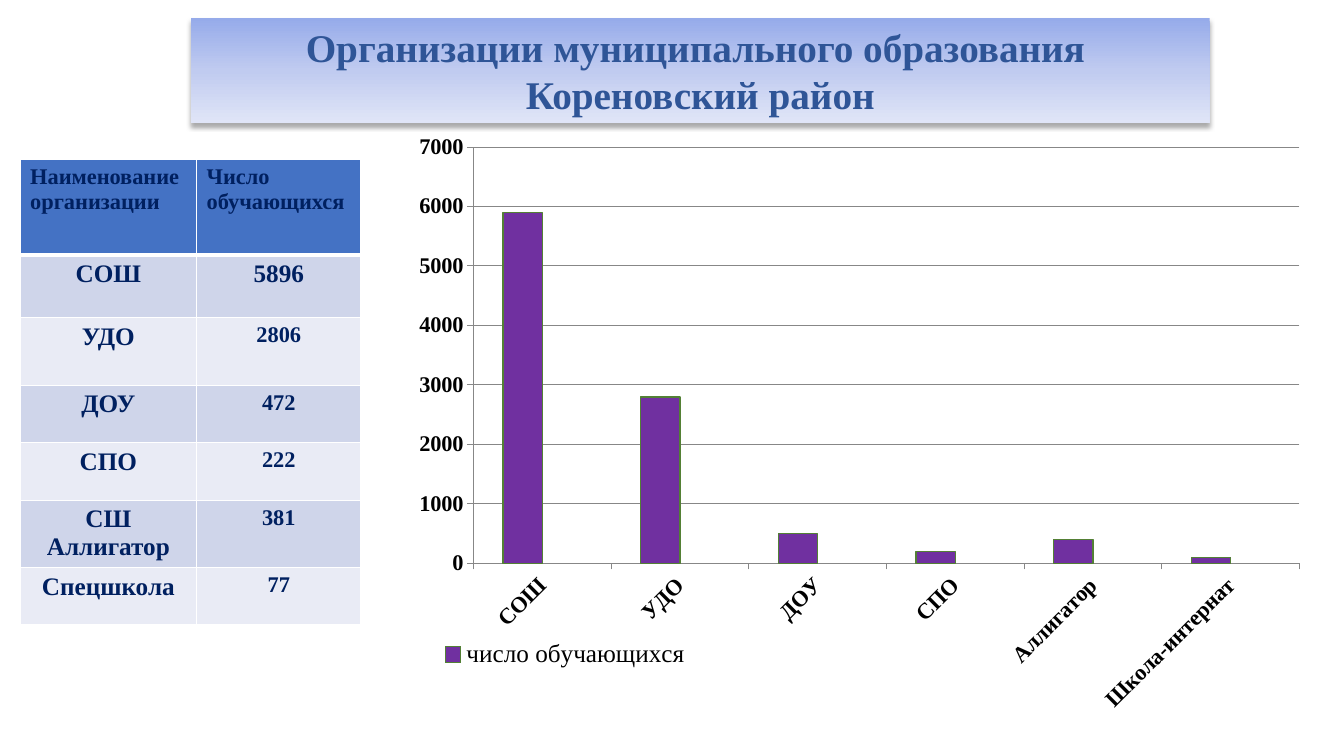
from copy import deepcopy
from lxml import etree
from pptx import Presentation, util as u
from pptx.chart import data as chart_data
from pptx.dml.color import RGBColor
from pptx.enum import chart as ch, shapes, text
from pptx.oxml import parse_xml
from pptx.oxml.ns import nsdecls, qn

WIDTH, HEIGHT = u.Inches(13.33), u.Inches(7.5)
SERIF = "Times New Roman"
NAVY, WHITE, BLACK, GRID = "002060", "FFFFFF", "000000", "878787"
HEADINGS = ("Наименование организации", "Число обучающихся")
ORGANISATIONS = [
    ("СОШ", "СОШ", 5896),
    ("УДО", "УДО", 2806),
    ("ДОУ", "ДОУ", 472),
    ("СПО", "СПО", 222),
    ("СШ Аллигатор", "Аллигатор", 381),
    ("Спецшкола", "Школа-интернат", 77),
]


def colour(value):
    """Turn a hex string into a colour."""
    return RGBColor.from_string(value)


def style(font, hue, **values):
    """Set the colour and the given format values of a font."""
    for name, value in {"name": SERIF, **values}.items():
        setattr(font, name, value)
    font.color.rgb = colour(hue)


def share(left, top, width, height):
    """Turn shares of the slide into a box."""
    return [u.Emu(int(part * side)) for part, side in
            zip((left, top, width, height), (WIDTH, HEIGHT) * 2)]


def add_banner(slide, box, lines):
    """Place the shaded title banner in the box."""
    banner = slide.shapes.add_shape(shapes.MSO_SHAPE.RECTANGLE, *box)
    banner.line.fill.background()
    banner.fill.gradient()
    banner.fill.gradient_angle = 270
    first = banner.fill._fill._gradFill.gsLst[0]
    first.addnext(deepcopy(first))
    for stop, (position, hue) in zip(
            banner.fill.gradient_stops,
            ((0, "96ABEA"), (0.5, "C0CBF0"), (1, "E0E5F7"))):
        stop.position = position
        stop.color.rgb = colour(hue)
    banner.shadow.inherit = False
    banner._element.spPr.find(qn("a:effectLst")).append(parse_xml(
        f'<a:outerShdw {nsdecls("a")} blurRad="{u.Pt(3.5)}" dist="{u.Pt(2.2)}" '
        'dir="5400000" rotWithShape="0"><a:srgbClr val="000000">'
        '<a:alpha val="32000"/></a:srgbClr></a:outerShdw>'))
    frame = banner.text_frame
    frame.word_wrap = True
    frame.vertical_anchor = text.MSO_ANCHOR.MIDDLE
    for number, line in enumerate(lines):
        paragraph = frame.paragraphs[0] if number == 0 else frame.add_paragraph()
        paragraph.alignment = text.PP_ALIGN.CENTER
        run = paragraph.add_run()
        run.text = line
        style(run.font, "2F5597", size=u.Pt(28), bold=True)


def add_borders(cell, **widths):
    """Draw white cell borders of the given widths in points."""
    for index, side in enumerate("LRTB"):
        cell._tc.get_or_add_tcPr().insert(index, parse_xml(
            f'<a:ln{side} {nsdecls("a")} w="{u.Pt(widths.get(side, 1))}">'
            f'<a:solidFill><a:srgbClr val="{WHITE}"/></a:solidFill></a:ln{side}>'))


def add_organisation_table(slide, box):
    """Place the table of organisations and student numbers in the box."""
    rows = [HEADINGS] + [(name, str(count)) for name, _, count in ORGANISATIONS]
    table = slide.shapes.add_table(len(rows), len(HEADINGS), *box).table
    for column, width in zip(table.columns, (1.75, 1.63)):
        column.width = u.Inches(width)
    for row, height in zip(table.rows, (0.95, 0.62, 0.67, 0.57, 0.57, 0.67, 0.57)):
        row.height = u.Inches(height)
    for r, values in enumerate(rows):
        for c, value in enumerate(values):
            cell = table.cell(r, c)
            cell.fill.solid()
            band = "CFD5EA" if r % 2 else "E9EBF5"
            cell.fill.fore_color.rgb = colour(band if r else "4472C4")
            add_borders(cell, **{0: {"B": 3}, 1: {"T": 3}}.get(r, {}))
            paragraph = cell.text_frame.paragraphs[0]
            if r:
                paragraph.alignment = text.PP_ALIGN.CENTER
            run = paragraph.add_run()
            run.text = value
            large = r == 1 or (r and c == 0)
            style(run.font, NAVY, size=u.Pt(18 if large else 16), bold=True)


def manual_layout(x, y, w, h, inner=False):
    """Make a chart layout from shares of the chart."""
    target = '<c:layoutTarget val="inner"/>' if inner else ""
    modes = "".join(f'<c:{side}Mode val="edge"/>' for side in "xy")
    sizes = "".join(f'<c:{side} val="{value}"/>'
                    for side, value in zip("xywh", (x, y, w, h)))
    return parse_xml(f'<c:layout {nsdecls("c")}><c:manualLayout>'
                     f'{target}{modes}{sizes}</c:manualLayout></c:layout>')


def add_student_chart(slide, box):
    """Place the column chart of student numbers, in round hundreds, in the box."""
    numbers = chart_data.CategoryChartData()
    numbers.categories = [label for _, label, _ in ORGANISATIONS]
    numbers.add_series("число обучающихся",
                       [round(count, -2) for *_, count in ORGANISATIONS])
    numbers.add_series("Series 2", [None] * len(ORGANISATIONS))
    chart = slide.shapes.add_chart(
        ch.XL_CHART_TYPE.COLUMN_CLUSTERED, *box, numbers).chart
    chart.has_title = False
    style(chart.font, BLACK, name="Calibri", size=u.Pt(18))

    plot = chart.plots[0]
    plot.gap_width, plot.overlap, plot.vary_by_categories = 150, 0, False
    for series, hue in zip(plot.series, ("7030A0", "A5A5A5")):
        series.format.fill.solid()
        series.format.fill.fore_color.rgb = colour(hue)
    students = plot.series[0].format.line
    students.color.rgb = colour("538035")
    students.width = u.Pt(1)

    values, categories = chart.value_axis, chart.category_axis
    for axis in (values, categories):
        axis.major_tick_mark = ch.XL_TICK_MARK.OUTSIDE
        axis.format.line.color.rgb = colour(GRID)
        style(axis.tick_labels.font, BLACK, size=u.Pt(16), bold=True)
    for name, value in {"minimum_scale": 0, "maximum_scale": 7000,
                        "major_unit": 1000, "has_major_gridlines": True}.items():
        setattr(values, name, value)
    values.major_gridlines.format.line.color.rgb = colour(GRID)
    categories._element.find(qn("c:txPr")).find(qn("a:bodyPr")).set("rot", "-2700000")

    area = chart._chartSpace.chart.plotArea
    for old in area.findall(qn("c:layout")):
        area.remove(old)
    area.insert(0, manual_layout(0.075, 0.028, 0.9, 0.685, inner=True))

    chart.has_legend = True
    legend = chart.legend
    legend.position = ch.XL_LEGEND_POSITION.RIGHT
    legend.include_in_layout = False
    style(legend.font, BLACK, size=u.Pt(18))
    for old in legend._element.findall(qn("c:layout")):
        legend._element.remove(old)
    hidden = etree.Element(qn("c:legendEntry"))
    for tag in ("idx", "delete"):
        etree.SubElement(hidden, qn(f"c:{tag}")).set("val", "1")
    legend._element.find(qn("c:legendPos")).addnext(hidden)
    hidden.addnext(manual_layout(0.035, 0.818, 0.28, 0.09))


def main():
    """Build the slide and save it."""
    deck = Presentation()
    deck.slide_width, deck.slide_height = WIDTH, HEIGHT
    slide = deck.slides.add_slide(deck.slide_layouts[6])
    add_organisation_table(slide, share(0.015, 0.211, 0.254, 0.624))
    add_banner(slide, share(0.142, 0.024, 0.758, 0.139),
               ("Организации муниципального образования ", "Кореновский район"))
    add_student_chart(slide, share(0.301, 0.172, 0.683, 0.804))
    deck.save("out.pptx")


if __name__ == "__main__":
    main()
